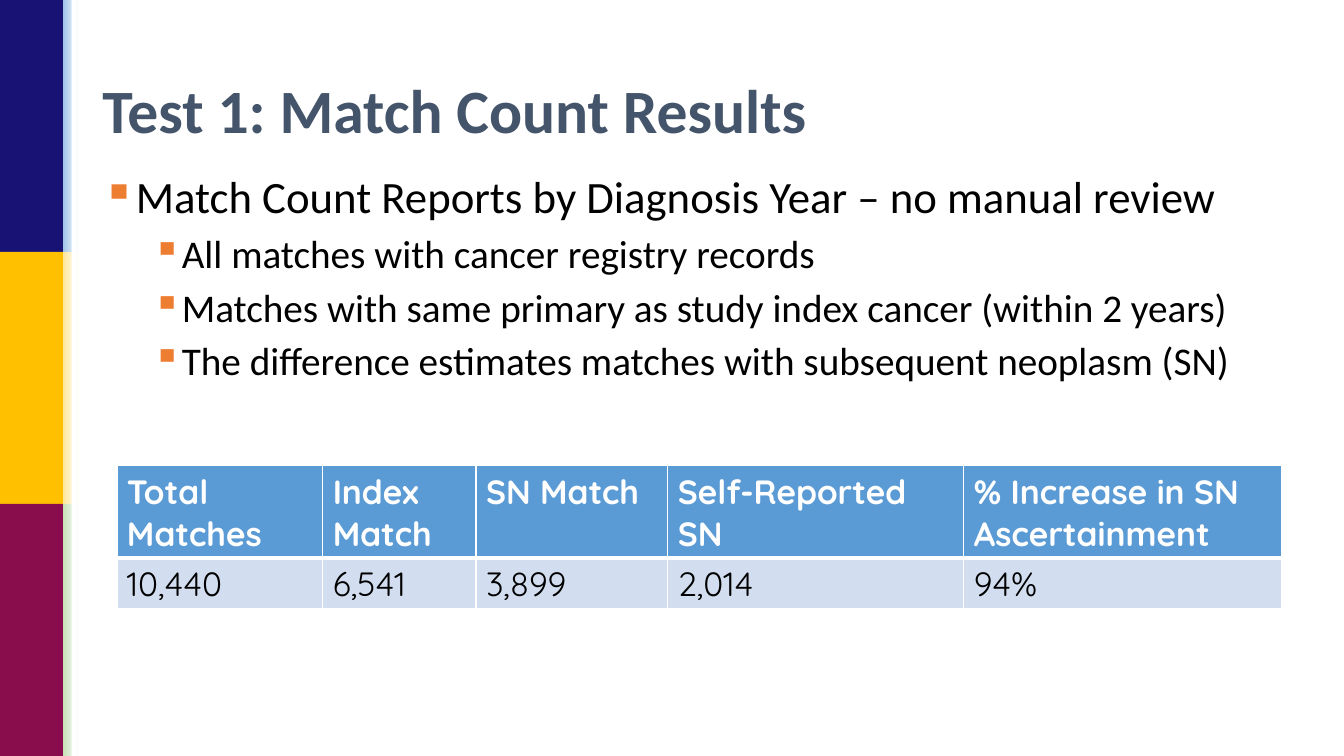
from lxml.etree import SubElement
from pptx import Presentation
from pptx.dml.color import RGBColor
from pptx.enum.shapes import MSO_SHAPE
from pptx.enum.text import MSO_ANCHOR
from pptx.oxml.ns import qn
from pptx.util import Pt

WHITE = RGBColor(0xFF, 0xFF, 0xFF)
BLACK = RGBColor(0x00, 0x00, 0x00)
SLATE = RGBColor(0x44, 0x54, 0x6A)
ORANGE = RGBColor(0xED, 0x7D, 0x31)
HEADER_BLUE = RGBColor(0x5B, 0x9B, 0xD5)
ROW_BLUE = RGBColor(0xD2, 0xDE, 0xEF)
NAVY = RGBColor(0x18, 0x12, 0x74)
GOLD = RGBColor(0xFF, 0xC0, 0x00)
MAROON = RGBColor(0x89, 0x0C, 0x4C)
PALE_BLUE = RGBColor(0x9D, 0xC3, 0xE6)
PALE_GOLD = RGBColor(0xFF, 0xE6, 0x99)
PALE_GREEN = RGBColor(0xC5, 0xE0, 0xB4)

FORMATS = {
    "title": {"name": "Calibri", "size": Pt(44), "bold": True, "color": SLATE},
    "bullet 0": {"name": "Calibri", "size": Pt(32), "color": BLACK},
    "bullet 1": {"name": "Calibri", "size": Pt(28), "color": BLACK},
    "header": {"name": "Quicksand", "size": Pt(24), "bold": True, "color": WHITE},
    "value": {"name": "Quicksand", "size": Pt(24), "bold": False, "color": BLACK},
}


def write(paragraph, text, style):
    run = paragraph.add_run()
    run.text = text
    for attribute, value in FORMATS[style].items():
        if attribute == "color":
            run.font.color.rgb = value
        else:
            setattr(run.font, attribute, value)


def add_bar(left, top, width, height):
    """Add a rectangle without outline or shadow; the caller fills it."""
    shape = slide.shapes.add_shape(
        MSO_SHAPE.RECTANGLE, Pt(left), Pt(top), Pt(width), Pt(height))
    shape.shadow.inherit = False
    shape.line.fill.background()
    return shape


presentation = Presentation()
presentation.slide_width, presentation.slide_height = Pt(960), Pt(540)
slide = presentation.slides.add_slide(presentation.slide_layouts[6])

# Side band: three solid blocks, each with a fading edge
BAND_HEIGHT = 180
for index, (solid, pale) in enumerate(
        [(NAVY, PALE_BLUE), (GOLD, PALE_GOLD), (MAROON, PALE_GREEN)]):
    top = index * BAND_HEIGHT
    block = add_bar(0, top, 45, BAND_HEIGHT)
    block.fill.solid()
    block.fill.fore_color.rgb = solid
    edge = add_bar(45, top, 11.5, BAND_HEIGHT)
    edge.fill.gradient()
    edge.fill.gradient_angle = 0
    for stop, color in zip(edge.fill.gradient_stops, (pale, WHITE)):
        stop.color.rgb = color
stripe = add_bar(51.25, 0, 3.5, 540)
stripe.fill.solid()
stripe.fill.fore_color.rgb = WHITE

# Bullets
body = slide.shapes.add_textbox(Pt(66), Pt(121.5), Pt(850), Pt(179)).text_frame
body.word_wrap = True
bullets = [
    (0, "Match Count Reports by Diagnosis Year – no manual review"),
    (1, "All matches with cancer registry records"),
    (1, "Matches with same primary as study index cancer (within 2 years)"),
    (1, "The difference estimates matches with subsequent neoplasm (SN)"),
]
for index, (level, text) in enumerate(bullets):
    paragraph = body.add_paragraph() if index else body.paragraphs[0]
    paragraph.level = level
    paragraph.line_spacing = 0.9
    paragraph.space_before = Pt(8 if index else 0)
    properties = paragraph._p.get_or_add_pPr()
    properties.set("marL", str(Pt(18 + 36 * level)))
    properties.set("indent", str(-Pt(18)))
    bullet_color = SubElement(properties, qn("a:buClr"))
    SubElement(bullet_color, qn("a:srgbClr"), val=str(ORANGE))
    SubElement(properties, qn("a:buChar"), char="▪")
    write(paragraph, text, f"bullet {level}")

# Title
title = slide.shapes.add_textbox(Pt(66), Pt(29), Pt(828), Pt(104)).text_frame
title.word_wrap = True
title.vertical_anchor = MSO_ANCHOR.MIDDLE
title.paragraphs[0].line_spacing = 0.9
write(title.paragraphs[0], "Test 1: Match Count Results", "title")

# Match count table
columns = [
    (147, "Total Matches", "10,440"),
    (109.5, "Index Match", "6,541"),
    (137, "SN Match", "3,899"),
    (211.5, "Self-Reported SN", "2,014"),
    (227, "% Increase in SN Ascertainment", "94%"),
]
rows = [
    (66, "header", HEADER_BLUE, {"lnL": 1, "lnR": 1, "lnT": 1, "lnB": 3}),
    (36, "value", ROW_BLUE, {"lnL": 1, "lnR": 1, "lnT": 3, "lnB": 1}),
]
table = slide.shapes.add_table(
    len(rows), len(columns), Pt(83.5), Pt(332.5), Pt(832), Pt(102)).table
for row_index, (height, style, fill_color, borders) in enumerate(rows):
    table.rows[row_index].height = Pt(height)
    for column_index, (width, *texts) in enumerate(columns):
        table.columns[column_index].width = Pt(width)
        cell = table.cell(row_index, column_index)
        cell_properties = cell._tc.get_or_add_tcPr()
        for side, weight in borders.items():
            border = SubElement(cell_properties, qn(f"a:{side}"), w=str(Pt(weight)))
            border_fill = SubElement(border, qn("a:solidFill"))
            SubElement(border_fill, qn("a:srgbClr"), val=str(WHITE))
        cell.fill.solid()
        cell.fill.fore_color.rgb = fill_color
        write(cell.text_frame.paragraphs[0], texts[row_index], style)

presentation.save("out.pptx")
